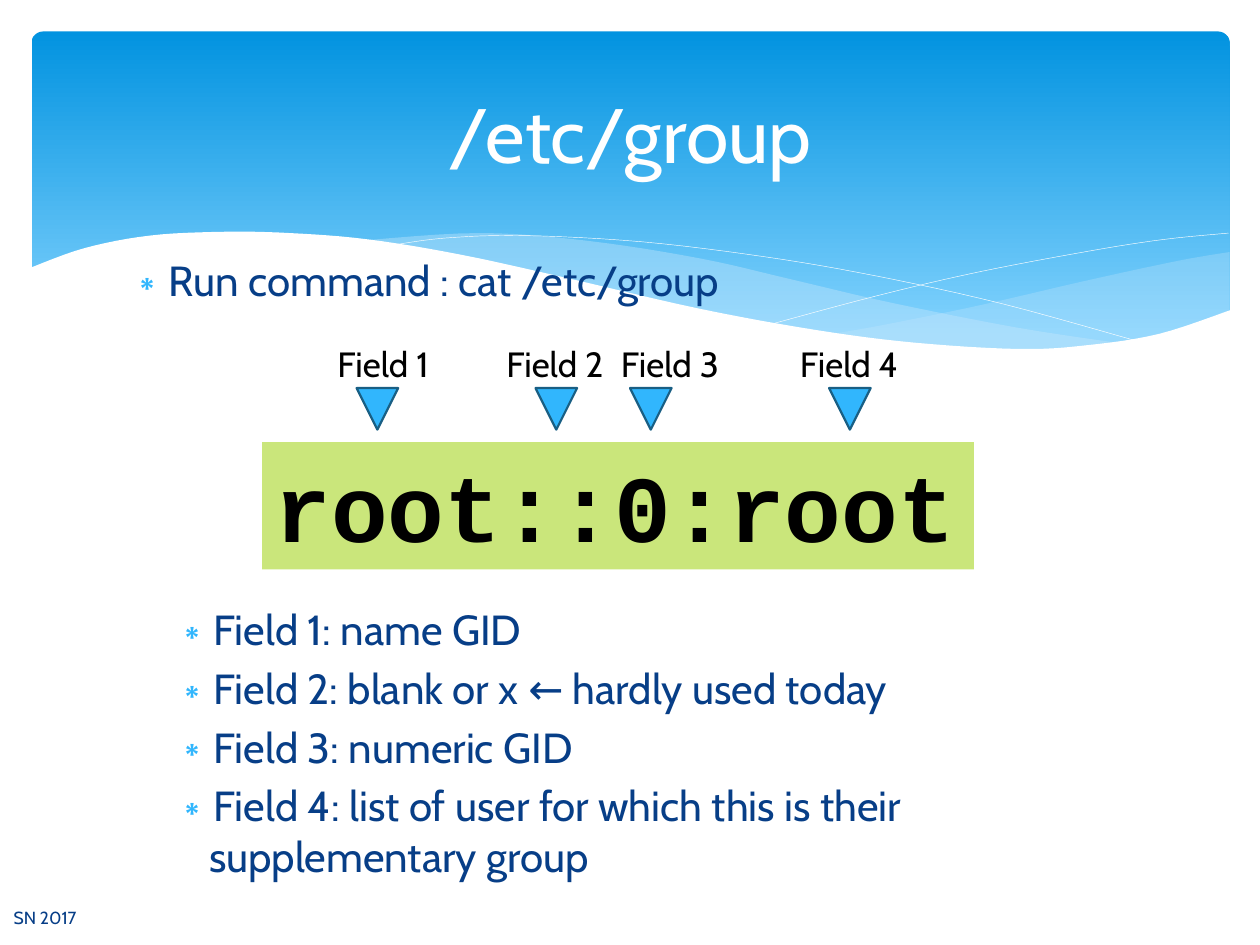
"""Build the /etc/group slide: a wave banner, a labelled group entry and a field list."""
from lxml import etree
from pptx import Presentation
from pptx import util as u
from pptx.dml.color import RGBColor
from pptx.enum import shapes, text
from pptx.oxml import ns

rgb = RGBColor.from_string
deck = Presentation()
deck.slide_width, deck.slide_height = u.Inches(10), u.Inches(7.5)
page = deck.slides.add_slide(deck.slide_layouts[1])
title, body = page.placeholders


def write(box, lines, size, color, font="Cabin", bullet=False):
    """Fill a box with formatted lines, optionally bulleted."""
    frame = box.text_frame
    frame.text = "\n".join(lines)
    frame.auto_size = text.MSO_AUTO_SIZE.NONE
    for para in frame.paragraphs:
        for span in para.runs:
            span.font.size, span.font.name = u.Pt(size), font
            span.font.color.rgb = rgb(color)
        if bullet:
            para.space_before = u.Pt(size * 0.2)
            props = para._p.get_or_add_pPr()
            props.set("marL", str(u.Inches(0.3)))
            props.set("indent", str(u.Inches(-0.3)))
            tint = etree.SubElement(props, ns.qn("a:buClr"))
            etree.SubElement(tint, ns.qn("a:srgbClr"), val="31B6FD")
            etree.SubElement(props, ns.qn("a:buFont"), typeface="Arial")
            etree.SubElement(props, ns.qn("a:buChar"), char="∗")
    return frame


def smooth(knots, steps=6):
    """Return points along a smooth curve through the knots."""
    ends = [knots[0], *knots, knots[-1]]
    points = [knots[0]]
    for a, b, c, d in zip(ends, ends[1:], ends[2:], ends[3:]):
        for step in range(1, steps + 1):
            t = step / steps
            points.append(tuple(
                q + t * (r - p + t * (2 * p - 5 * q + 4 * r - s + t * (3 * (q - r) + s - p))) / 2
                for p, q, r, s in zip(a, b, c, d)))
    return points


banner = page.shapes.add_shape(shapes.MSO_SHAPE.ROUNDED_RECTANGLE, *map(u.Inches, (0.25, 0.25, 9.51, 2.7)))
banner.adjustments[0] = 0.034
banner.shadow.inherit = False
banner.line.fill.background()
banner.fill.gradient()
banner.fill.gradient_angle = 270
for stop, place, color in zip(banner.fill.gradient_stops, (0, 0.9), ("0293E0", "83D3FE")):
    stop.position, stop.color.rgb = place, rgb(color)

right_swell = (smooth([(9.76, 2), (9.35, 2.07), (8.61, 2.23), (7.79, 2.42), (7.06, 2.57), (6.61, 2.65)])
               + smooth([(6.61, 2.65), (7.19, 2.72), (8.03, 2.78), (8.72, 2.74), (9.28, 2.63), (9.76, 2.47)]))
middle_swell = (smooth([(8.93, 2.73), (8.07, 2.6), (7.06, 2.4), (6.29, 2.22), (5.55, 2.05),
                        (4.65, 1.91), (3.8, 1.85), (2.86, 1.91)])
                + smooth([(2.86, 1.91), (3.62, 2.03), (4.49, 2.22), (5.66, 2.48), (6.5, 2.64),
                          (7.36, 2.75), (8.18, 2.78), (8.93, 2.73)]))
falling_line = smooth([(3.09, 1.95), (3.53, 1.89), (4.16, 1.87), (5.1, 1.92), (6.08, 2.04),
                       (6.95, 2.19), (7.95, 2.41), (9.07, 2.72)])
rising_line = smooth([(6.13, 2.57), (6.95, 2.35), (7.76, 2.16), (8.66, 1.99), (9.24, 1.9), (9.75, 1.85)])
white_wave = smooth([(9.77, 2.46), (9.2, 2.65), (8.63, 2.74), (8.09, 2.77), (7.26, 2.72), (6.48, 2.62),
                     (5.55, 2.45), (4.47, 2.2), (3.65, 2.02), (2.92, 1.9), (2.3, 1.85), (1.77, 1.84),
                     (1.19, 1.87), (0.67, 1.97), (0.23, 2.13)]) + [(0.23, 3.29), (9.77, 3.29)]

for points, color, alpha in ((right_swell, "C6E7FC", 29), (middle_swell, "C6E7FC", 40),
                             (falling_line, None, 0), (rising_line, None, 0), (white_wave, "FFFFFF", 100)):
    start, *rest = [(u.Inches(x), u.Inches(y)) for x, y in points]
    builder = page.shapes.build_freeform(*start)
    builder.add_line_segments(rest, close=color is not None)
    wave = builder.convert_to_shape()
    wave.shadow.inherit = False
    if color:
        wave.fill.solid()
        wave.fill.fore_color.rgb = rgb(color)
        wave.line.fill.background()
        solid = wave._element.spPr.find(ns.qn("a:solidFill"))
        etree.SubElement(solid[0], ns.qn("a:alpha"), val=str(alpha * 1000))
    else:
        wave.fill.background()
        wave.line.color.rgb, wave.line.width = rgb("FFFFFF"), u.Pt(0.25)

for holder, place in ((body, (1.26, 4.74, 7.5, 2.59)), (title, (0.5, 0.37, 9, 1.37))):
    holder.left, holder.top, holder.width, holder.height = map(u.Inches, place)
    page.shapes._spTree.append(holder._element)
write(body, ["Field 1: name GID", "Field 2: blank or x ← hardly used today", "Field 3: numeric GID",
             "Field 4: list of user for which this is their supplementary group"], 24, "073E87", bullet=True)
heading = write(title, ["/etc/group"], 44, "FFFFFF")
heading.vertical_anchor = text.MSO_ANCHOR.MIDDLE
heading.paragraphs[0].alignment = text.PP_ALIGN.CENTER

entry = page.shapes.add_shape(shapes.MSO_SHAPE.RECTANGLE, *map(u.Inches, (2.08, 3.51, 5.65, 1.01)))
entry.shadow.inherit = False
entry.fill.solid()
entry.fill.fore_color.rgb = rgb("CAE67B")
entry.line.fill.background()
entry_frame = write(entry, ["root::0:root"], 54, "000000", "Courier New")
entry_frame.vertical_anchor = text.MSO_ANCHOR.TOP
entry_frame.paragraphs[0].alignment = text.PP_ALIGN.LEFT
entry_frame.paragraphs[0].runs[0].font.bold = True

fields = ((2.58, 2.83), (3.92, 4.25), (4.83, 5), (6.25, 6.58))
for number, (label_left, marker_left) in enumerate(fields, 1):
    label = page.shapes.add_textbox(*map(u.Inches, (label_left, 2.67, 1, 0.44)))
    write(label, [f"Field {number}"], 20, "000000").word_wrap = False
    marker = page.shapes.add_shape(shapes.MSO_SHAPE.ISOSCELES_TRIANGLE,
                                   *map(u.Inches, (marker_left, 3.08, 0.33, 0.33)))
    marker.rotation = 180
    marker.shadow.inherit = False
    marker.fill.solid()
    marker.fill.fore_color.rgb = rgb("31B6FD")
    marker.line.color.rgb, marker.line.width = rgb("195F84"), u.Pt(1.25)

footer = page.shapes.add_textbox(*map(u.Inches, (0.01, 7.08, 4.14, 0.4)))
footer_frame = write(footer, ["SN 2017"], 10, "073E87")
footer_frame.word_wrap, footer_frame.vertical_anchor = True, text.MSO_ANCHOR.MIDDLE

command = page.shapes.add_textbox(*map(u.Inches, (0.91, 1.97, 7.5, 0.56)))
write(command, ["Run command : cat /etc/group"], 24, "073E87", bullet=True).word_wrap = True

deck.save("out.pptx")
